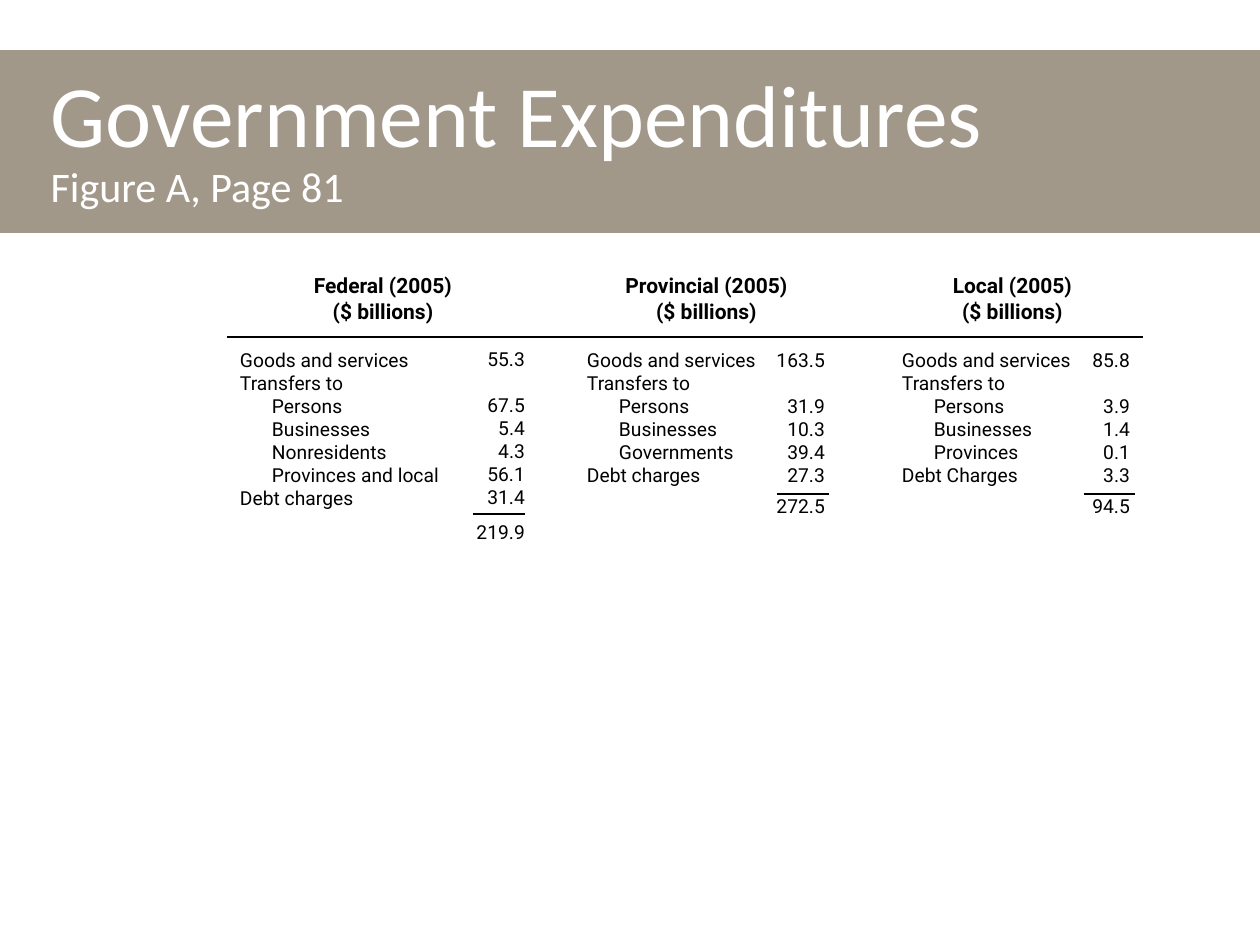
import pptx
import pptx.dml.color
import pptx.enum.shapes
import pptx.enum.text
import pptx.oxml
import pptx.util

PX = 914400 // 126
ALIGN = pptx.enum.text.PP_ALIGN
BLACK, WHITE, TAUPE = "000000", "FFFFFF", "A2988A"
INDENT = 32
ROW_GAP = pptx.util.Pt(13.25)
HEADER_TOP, LABEL_TOP = 273, 348

# Each level: (label, indented, amount); horizontal spans are (left, width)
LEVELS = [
    {
        "name": "Federal (2005)",
        "header": (248, 270), "labels": (240, 228), "amounts": (451, 74),
        "amount_top": 347, "sum_line": (473, 525, 514),
        "rows": [("Goods and services", False, "55.3"), ("Transfers to", False, None),
                 ("Persons", True, "67.5"), ("Businesses", True, "5.4"),
                 ("Nonresidents", True, "4.3"), ("Provinces and local", True, "56.1"),
                 ("Debt charges", False, "31.4")],
        "total": "219.9", "total_format": {"line_spacing": 1.5},
    },
    {
        "name": "Provincial (2005)",
        "header": (605, 203), "labels": (587, 228), "amounts": (772, 53),
        "amount_top": 348, "sum_line": (777, 829, 494),
        "rows": [("Goods and services", False, "163.5"), ("Transfers to", False, None),
                 ("Persons", True, "31.9"), ("Businesses", True, "10.3"),
                 ("Governments", True, "39.4"), ("Debt charges", False, "27.3")],
        "total": "272.5", "total_format": {"space_before": pptx.util.Pt(4.5)},
    },
    {
        "name": "Local (2005)",
        "header": (898, 229), "labels": (902, 175), "amounts": (1077, 53),
        "amount_top": 348, "sum_line": (1084, 1135, 494),
        "rows": [("Goods and services", False, "85.8"), ("Transfers to", False, None),
                 ("Persons", True, "3.9"), ("Businesses", True, "1.4"),
                 ("Provinces", True, "0.1"), ("Debt Charges", False, "3.3")],
        "total": "94.5", "total_format": {"space_before": pptx.util.Pt(4.5)},
    },
]


def px(length):
    return pptx.util.Emu(length * PX)


def color(hex_code):
    return pptx.dml.color.RGBColor.from_string(hex_code)


def add_run(paragraph, text, size, font, hex_code, bold=False):
    run = paragraph.add_run()
    run.text = text
    run.font.size = pptx.util.Pt(size)
    run.font.name = font
    run.font.bold = bold
    run.font.color.rgb = color(hex_code)


def add_text(slide, span, top, lines, size=11, bold=False, align=ALIGN.LEFT):
    """Lines are (text, left indent in px, paragraph settings)."""
    left, width = span
    height = round(len(lines) * size * 2.11)
    box = slide.shapes.add_textbox(px(left), px(top), px(width), px(height))
    frame = box.text_frame
    frame.word_wrap = True
    frame.auto_size = pptx.enum.text.MSO_AUTO_SIZE.SHAPE_TO_FIT_TEXT
    frame.margin_left = frame.margin_right = frame.margin_top = frame.margin_bottom = 0
    for number, (text, indent, settings) in enumerate(lines):
        paragraph = frame.add_paragraph() if number else frame.paragraphs[0]
        paragraph.alignment = align
        if indent:
            paragraph._p.get_or_add_pPr().set("marL", str(px(indent)))
        for setting, value in settings.items():
            setattr(paragraph, setting, value)
        add_run(paragraph, text, size, "Roboto", BLACK, bold)


def add_rule(slide, start, end, y):
    rule = slide.shapes.add_connector(
        pptx.enum.shapes.MSO_CONNECTOR.STRAIGHT, px(start), px(y), px(end), px(y))
    rule.line.color.rgb = color(BLACK)
    rule.line.width = pptx.util.Pt(1)
    rule._element.spPr.append(pptx.oxml.parse_xml(
        '<a:effectLst xmlns:a="http://schemas.openxmlformats.org/drawingml/2006/main"/>'))


def format_title(slide):
    title = slide.shapes.title
    title.left, title.top, title.width, title.height = px(0), px(50), px(1260), px(183)
    title.fill.solid()
    title.fill.fore_color.rgb = color(TAUPE)
    frame = title.text_frame
    frame.word_wrap = True
    frame.auto_size = pptx.enum.text.MSO_AUTO_SIZE.NONE
    frame.vertical_anchor = pptx.enum.text.MSO_ANCHOR.MIDDLE
    heading = frame.paragraphs[0]
    heading.alignment = ALIGN.LEFT
    heading.line_spacing = 0.9
    heading._p.get_or_add_pPr().set("marL", str(px(38)))
    add_run(heading, "Government Expenditures", 50, "Calibri", WHITE)
    heading.add_line_break()
    add_run(heading, "Figure A, Page 81", 24, "Calibri", WHITE)


def amount_lines(level):
    lines = []
    skipped = False
    for _, _, amount in level["rows"]:
        if amount:
            # The row without an amount becomes spacing above the next one
            lines.append((amount, 0, {"space_before": ROW_GAP} if skipped else {}))
        skipped = amount is None
    return lines + [(level["total"], 0, level["total_format"])]


def add_level(slide, level):
    add_text(slide, level["header"], HEADER_TOP,
             [(level["name"], 0, {}), ("($ billions)", 0, {})],
             size=12, bold=True, align=ALIGN.CENTER)
    labels = [(label, INDENT if indented else 0, {})
              for label, indented, _ in level["rows"]]
    add_text(slide, level["labels"], LABEL_TOP, labels)
    add_text(slide, level["amounts"], level["amount_top"],
             amount_lines(level), align=ALIGN.RIGHT)
    add_rule(slide, *level["sum_line"])


def main():
    presentation = pptx.Presentation()
    presentation.slide_width, presentation.slide_height = px(1260), px(945)
    slide = presentation.slides.add_slide(presentation.slide_layouts[5])

    # Title band
    format_title(slide)

    # Rule under the headers, then one block per level of government
    add_rule(slide, 1143, 227, 337)
    for level in LEVELS:
        add_level(slide, level)

    presentation.save("out.pptx")


if __name__ == "__main__":
    main()
